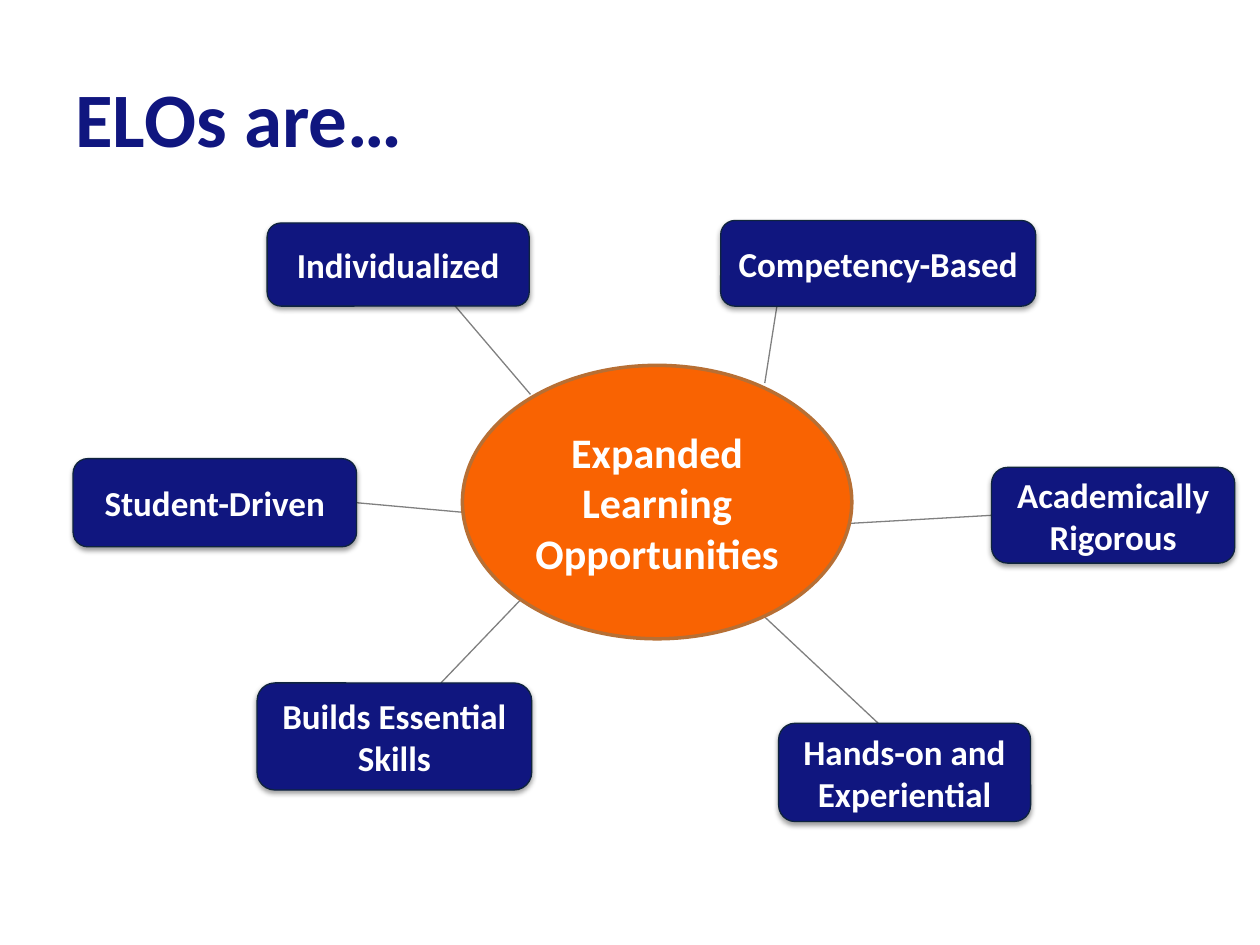
"""Build the slide showing the six qualities of Expanded Learning Opportunities."""
from lxml import etree
from pptx import Presentation
from pptx.dml.color import RGBColor
from pptx.enum import shapes, text
from pptx.oxml import ns
from pptx.util import Inches, Pt

NAVY = RGBColor(0x10, 0x16, 0x7F)
DARK_NAVY = RGBColor(0x0F, 0x24, 0x3E)
ORANGE = RGBColor(0xF9, 0x63, 0x02)
BROWN = RGBColor(0xB7, 0x6F, 0x34)
GRAY = RGBColor(0x80, 0x80, 0x80)
WHITE = RGBColor(0xFF, 0xFF, 0xFF)

TITLE = "ELOs are…"
HUB = ("Expanded Learning Opportunities", (3.67, 2.9, 3.09, 2.17))
LEFT_SIDE, RIGHT_SIDE = 1, 3
# label, box, spoke start, spoke end at the hub, joined side
QUALITIES = [
    ("Individualized", (2.12, 1.77, 2.08, 0.66), (3.52, 2.32), (4.21, 3.13), None),
    ("Academically Rigorous", (7.87, 3.71, 1.93, 0.76), (7.87, 4.09), (6.64, 4.16), LEFT_SIDE),
    ("Student-Driven", (0.58, 3.64, 2.25, 0.7), (2.83, 3.99), (3.83, 4.08), RIGHT_SIDE),
    ("Hands-on and Experiential", (6.18, 5.74, 2, 0.78), (6.97, 5.74), (5.87, 4.71), None),
    ("Builds Essential Skills", (2.04, 5.42, 2.18, 0.85), (3.5, 5.42), (4.18, 4.71), None),
    ("Competency-Based", (5.72, 1.75, 2.5, 0.68), (6.18, 2.34), (6.07, 3.04), None),
]


def inches(values):
    return [Inches(value) for value in values]


def write(shape, words, size, color, align):
    frame = shape.text_frame
    frame.word_wrap = True
    frame.vertical_anchor = text.MSO_ANCHOR.MIDDLE
    paragraph = frame.paragraphs[0]
    paragraph.text = words
    paragraph.alignment = align
    font = paragraph.font
    font.name, font.size, font.bold = "Calibri", Pt(size), True
    font.color.rgb = color


def add_node(slide, kind, label, box, size, fill, line, line_width):
    node = slide.shapes.add_shape(kind, *inches(box))
    node.shadow.inherit = False
    node.fill.solid()
    node.fill.fore_color.rgb = fill
    node.line.color.rgb = line
    node.line.width = Pt(line_width)
    write(node, label, size, WHITE, text.PP_ALIGN.CENTER)
    return node


def add_shadow(node):
    effects = node._element.spPr.find(ns.qn("a:effectLst"))
    shadow = etree.SubElement(effects, ns.qn("a:outerShdw"), blurRad=str(Pt(3.1)),
                              dist=str(Pt(1.6)), dir="5400000", rotWithShape="0")
    color = etree.SubElement(shadow, ns.qn("a:srgbClr"), val="000000")
    etree.SubElement(color, ns.qn("a:alpha"), val="38000")


def add_spoke(slide, quality, start, end, side):
    spoke = slide.shapes.add_connector(shapes.MSO_CONNECTOR.STRAIGHT, *inches(start + end))
    if side is not None:
        spoke.begin_connect(quality, side)
    spoke.line.color.rgb = GRAY
    spoke.line.width = Pt(0.75)
    etree.SubElement(spoke._element.spPr, ns.qn("a:effectLst"))
    slide.shapes._spTree.insert(2, spoke._element)


def main():
    deck = Presentation()
    deck.slide_width, deck.slide_height = inches((10, 7.5))
    slide = deck.slides.add_slide(deck.slide_layouts[6])

    title = slide.shapes.add_textbox(*inches((0.5, 0.3, 9, 1.25)))
    write(title, TITLE, 44, NAVY, text.PP_ALIGN.LEFT)

    add_node(slide, shapes.MSO_SHAPE.OVAL, *HUB, 24, ORANGE, BROWN, 2)
    for label, box, start, end, side in QUALITIES:
        quality = add_node(slide, shapes.MSO_SHAPE.ROUNDED_RECTANGLE, label, box,
                           20, NAVY, DARK_NAVY, 0.75)
        quality.text_frame.margin_left = quality.text_frame.margin_right = Inches(0.08)
        add_shadow(quality)
        add_spoke(slide, quality, start, end, side)

    deck.save("out.pptx")


if __name__ == "__main__":
    main()
